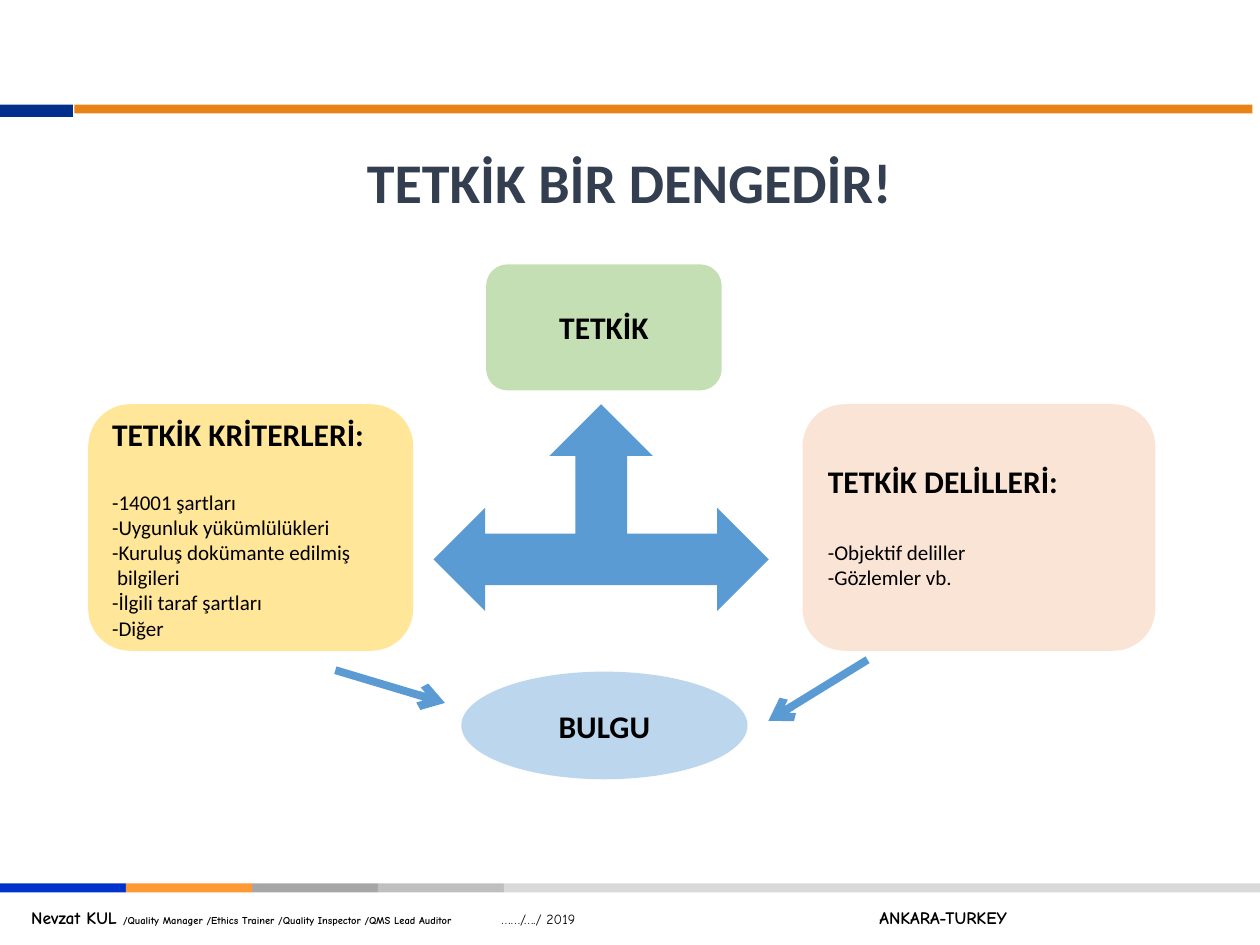
from dataclasses import dataclass

from lxml import etree
from pptx import Presentation
from pptx import util as u
from pptx.dml.color import RGBColor
from pptx.enum import shapes, text
from pptx.oxml.ns import qn

SHAPE = shapes.MSO_SHAPE
ALIGN = text.PP_ALIGN
ANCHOR = text.MSO_ANCHOR


@dataclass(frozen=True)
class Theme:
    # Fonts and type sizes
    font: str = "Calibri"
    footer_font: str = "Comic Neue"
    title_pt: int = 32
    heading_pt: int = 18
    list_pt: int = 12
    name_pt: int = 10
    date_pt: int = 8
    role_pt: int = 6
    # Colours
    ink: str = "000000"
    title: str = "333E50"
    arrow: str = "5B9BD4"
    audit: str = "C5DFB4"
    criteria: str = "FFE699"
    evidence: str = "FAE4D5"
    finding: str = "BCD6ED"
    top_bars: tuple = ("002F8E", "E88416")
    bottom_bars: tuple = ("0033CC", "FF9933", "A6A6A6", "BFBFBF", "D9D9D9")


class Deck:
    """Holds the theme and the current slide; lengths are in centimetres."""

    def __init__(self, theme):
        self.t = theme
        self.prs = Presentation()
        self.prs.slide_width, self.prs.slide_height = u.Cm(25.4), u.Cm(19.05)
        self.s = self.prs.slides.add_slide(self.prs.slide_layouts[3])

    def run(self, p, words, size, bold=False, color=None, font=None):
        r = p.add_run()
        r.text = words
        r.font.size, r.font.bold = u.Pt(size), bold
        r.font.name = font or self.t.font
        r.font.color.rgb = RGBColor.from_string(color or self.t.ink)

    def frame(self, sp, anchor=ANCHOR.TOP, inset=0):
        tf = sp.text_frame
        tf.word_wrap, tf.auto_size = True, text.MSO_AUTO_SIZE.NONE
        tf.vertical_anchor = anchor
        tf.margin_left = u.Cm(inset)
        tf.margin_right = tf.margin_top = tf.margin_bottom = 0
        return tf

    def shape(self, kind, box, fill, label=None, round_by=None):
        sp = self.s.shapes.add_shape(kind, *map(u.Cm, box))
        sp.shadow.inherit = False
        sp.fill.solid()
        sp.fill.fore_color.rgb = RGBColor.from_string(fill)
        sp.line.fill.background()
        if round_by:
            sp.adjustments[0] = round_by
        if label:
            p = self.frame(sp, ANCHOR.MIDDLE).paragraphs[0]
            p.alignment = ALIGN.CENTER
            self.run(p, label, self.t.heading_pt, True)

    def textbox(self, box, anchor=ANCHOR.TOP, inset=0):
        sp = self.s.shapes.add_textbox(*map(u.Cm, box))
        return self.frame(sp, anchor, inset).paragraphs[0]

    def heading(self, box, words):
        self.run(self.textbox(box), words, self.t.heading_pt, True)

    def placeholder(self, index, box, anchor):
        sp = self.s.placeholders[index]
        sp.left, sp.top, sp.width, sp.height = map(u.Cm, box)
        # Bring in front of the panels drawn so far
        sp._element.getparent().append(sp._element)
        return self.frame(sp, anchor)

    def title(self, box, words):
        p = self.placeholder(0, box, ANCHOR.MIDDLE).paragraphs[0]
        p.alignment = ALIGN.CENTER
        self.run(p, words, self.t.title_pt, True, self.t.title)

    def dash_list(self, index, box, items):
        tf = self.placeholder(index, box, ANCHOR.TOP)
        for i, item in enumerate(items):
            p = tf.add_paragraph() if i else tf.paragraphs[0]
            pPr = p._p.get_or_add_pPr()
            hang = u.Cm(0.1)
            pPr.set("marL", str(hang))
            pPr.set("indent", str(-hang))
            etree.SubElement(pPr, qn("a:buNone"))
            p.space_before = u.Pt(0)
            self.run(p, item, self.t.list_pt)

    def arrow(self, start, end):
        cx = self.s.shapes.add_connector(
            shapes.MSO_CONNECTOR.STRAIGHT, *map(u.Cm, start + end))
        cx.line.width = u.Pt(4.5)
        cx.line.color.rgb = RGBColor.from_string(self.t.arrow)
        etree.SubElement(cx.line._get_or_add_ln(), qn("a:tailEnd"), type="arrow")
        etree.SubElement(cx._element.spPr, qn("a:effectLst"))

    def footer(self, box, parts, stops):
        p = self.textbox(box, ANCHOR.MIDDLE, inset=0.63)
        tabs = etree.SubElement(p._p.get_or_add_pPr(), qn("a:tabLst"))
        for stop in stops:
            etree.SubElement(tabs, qn("a:tab"), pos=str(u.Cm(stop)), algn="l")
        for words, size, bold in parts:
            self.run(p, words, size, bold, font=self.t.footer_font)


def main():
    t = Theme()
    d = Deck(t)

    # Top bars
    d.shape(SHAPE.RECTANGLE, (0, 2.11, 1.47, 0.25), t.top_bars[0])
    d.shape(SHAPE.RECTANGLE, (1.5, 2.11, 23.75, 0.18), t.top_bars[1])

    # Bottom bars: four short steps, then one to the right edge
    step = 2.54
    for i, color in enumerate(t.bottom_bars):
        width = 25.4 - i * step if color == t.bottom_bars[-1] else step
        d.shape(SHAPE.RECTANGLE, (i * step, 17.81, width, 0.18), color)

    # Footer
    d.footer((0, 18.16, 25.4, 0.69), [
        ("Nevzat KUL ", t.name_pt, True),
        ("/Quality Manager /Ethics Trainer /Quality Inspector /QMS Lead Auditor",
         t.role_pt, True),
        ("\t……/…./ 2019", t.date_pt, False),
        ("\tANKARA-TURKEY", t.name_pt, True),
    ], stops=(9.48, 17.1))

    d.title((2.9, 2.92, 19.58, 1.45), "TETKİK BİR DENGEDİR!")

    # Centre: audit, three-way arrow, finding
    corner = 0.17
    d.shape(SHAPE.LEFT_RIGHT_UP_ARROW, (8.74, 8.15, 6.76, 4.17), t.arrow)
    d.shape(SHAPE.ROUNDED_RECTANGLE, (9.8, 5.33, 4.75, 2.54), t.audit,
            "TETKİK", corner)
    d.shape(SHAPE.OVAL, (9.3, 13.54, 5.77, 2.17), t.finding, "BULGU")

    # Left panel: criteria
    d.shape(SHAPE.ROUNDED_RECTANGLE, (1.78, 8.15, 6.55, 4.97), t.criteria,
            round_by=corner)
    d.heading((2.26, 8.36, 5.8, 0.84), "TETKİK KRİTERLERİ:")
    d.dash_list(1, (2.26, 9.86, 5.1, 3.1), [
        "-14001 şartları",
        "-Uygunluk yükümlülükleri",
        "-Kuruluş dokümante edilmiş bilgileri",
        "-İlgili taraf şartları",
        "-Diğer",
    ])

    # Right panel: evidence
    d.shape(SHAPE.ROUNDED_RECTANGLE, (16.18, 8.15, 7.11, 4.97), t.evidence,
            round_by=corner)
    d.heading((16.69, 9.32, 5.8, 0.84), "TETKİK DELİLLERİ:")
    d.dash_list(2, (16.69, 10.87, 3.5, 1.07),
                ["-Objektif deliller", "-Gözlemler vb."])

    # Both panels lead to the finding
    d.arrow((6.76, 13.51), (8.97, 14.17))
    d.arrow((17.49, 13.3), (15.49, 14.53))

    d.prs.save("out.pptx")


if __name__ == "__main__":
    main()
